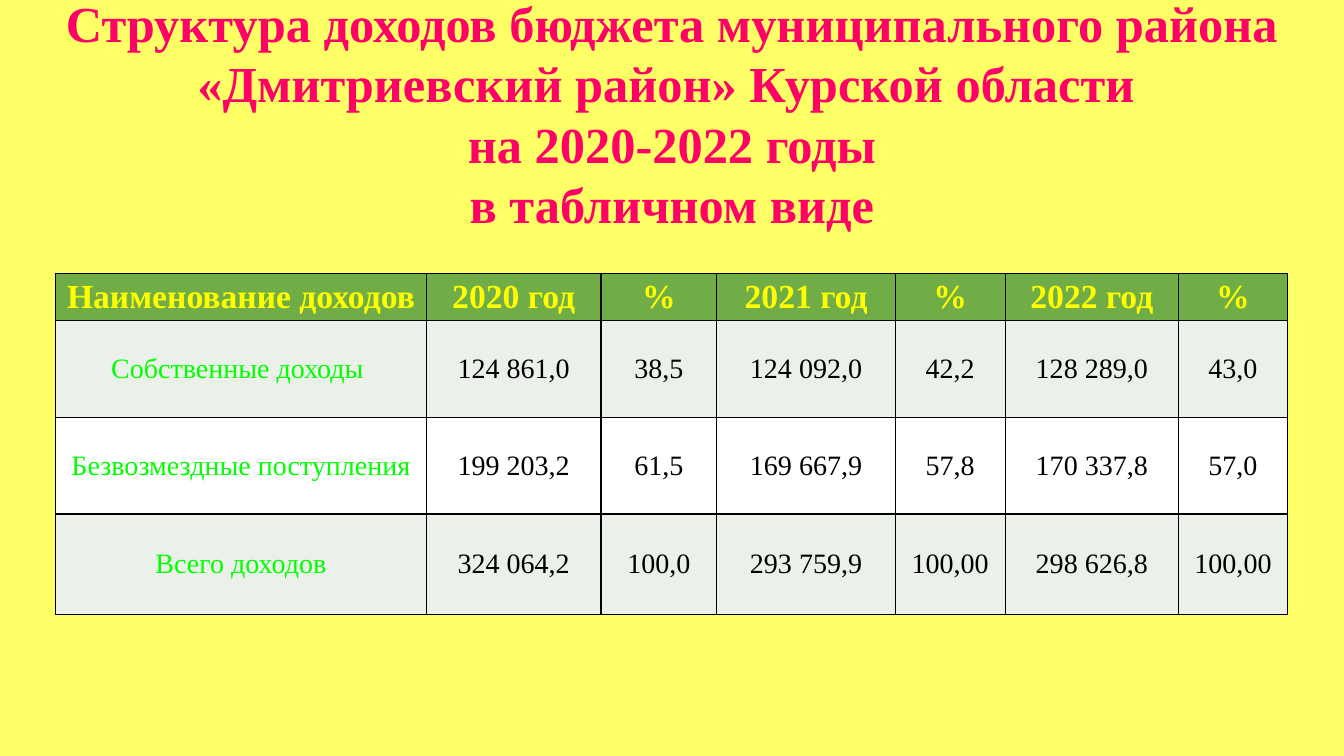
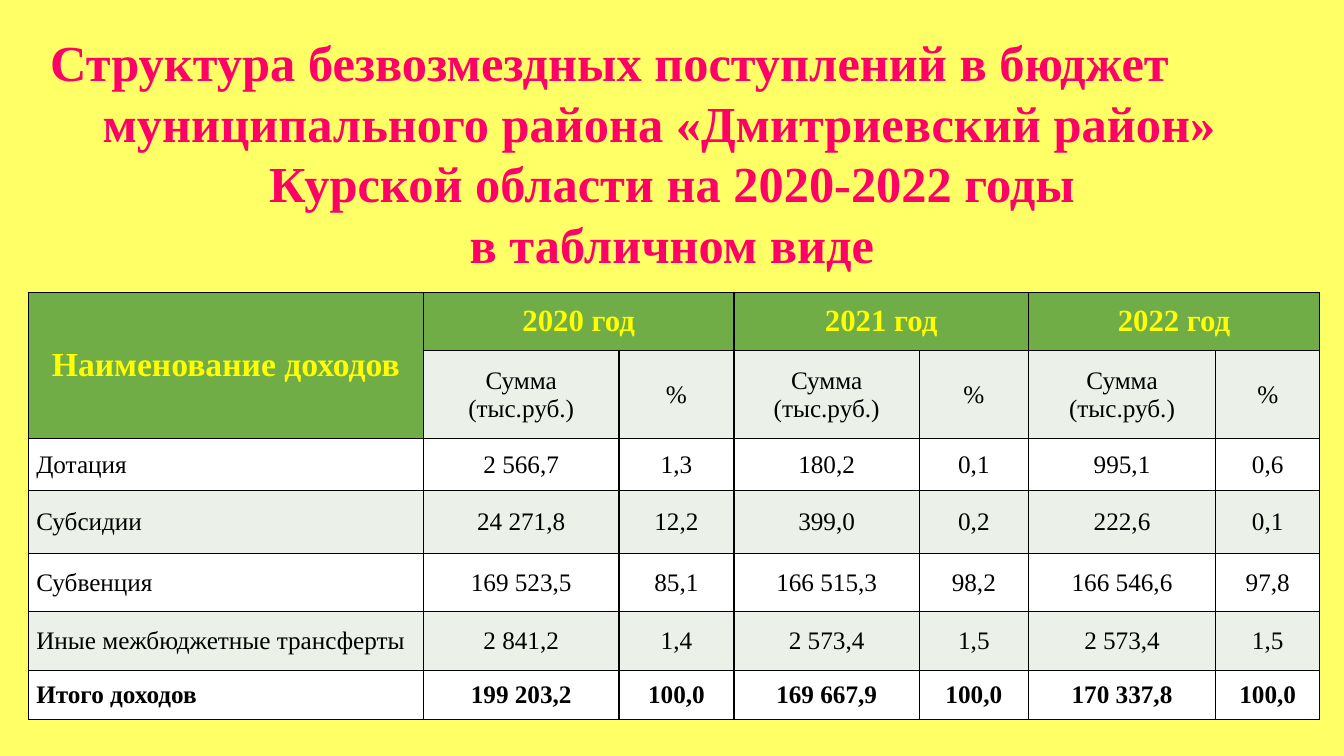
from lxml import etree
from pptx import Presentation
from pptx import util as u
from pptx.dml.color import RGBColor
from pptx.enum import text as t
from pptx.oxml.ns import qn

FONT = "Times New Roman"
HEX = {"page": "FFFF66", "title": "FF0066", "head": "70AD47", "gold": "FFFF00",
       "band": "EBF1E9", "white": "FFFFFF", "label": "00FF00", "ink": "000000"}

# Content: title lines are (text, left indent or None for centred),
# rows are (height, fill, cells), spans are (row, column, last row, last column)
SLIDES = [
    {
        "title": [("Структура доходов бюджета муниципального района", None),
                  ("«Дмитриевский район» Курской области", 1.86),
                  ("на 2020-2022 годы", None),
                  ("в табличном виде", None)],
        "box": (0, 2.24),
        "at": (0.55, 2.71),
        "cols": [3.68, 1.73, 1.15, 1.77, 1.09, 1.72, 1.08],
        "rows": [
            (0.47, "head", ["Наименование доходов", "2020 год", "%", "2021 год", "%",
                            "2022 год", "%"]),
            (0.96, "band", ["Собственные доходы ", "124 861,0", "38,5", "124 092,0", "42,2",
                            "128 289,0", "43,0"]),
            (0.96, "white", ["Безвозмездные поступления", "199 203,2", "61,5", "169 667,9",
                             "57,8", "170 337,8", "57,0"]),
            (1, "band", ["Всего доходов", "324 064,2", "100,0", "293 759,9", "100,00",
                         "298 626,8", "100,00"]),
        ],
        "spans": [],
        "year": 24, "size": 20, "label": "label", "align": t.PP_ALIGN.CENTER, "total": False,
    },
    {
        "title": [("Структура безвозмездных поступлений в бюджет", 0.4),
                  ("муниципального района «Дмитриевский район»", 0.92),
                  ("Курской области на 2020-2022 годы", None),
                  ("в табличном виде", None)],
        "box": (0.24, 2.54),
        "at": (0.28, 2.9),
        "cols": [3.92, 1.94, 1.14, 1.84, 1.08, 1.86, 1.03],
        "rows": [
            (0.58, "head", ["Наименование доходов", "2020 год", "", "2021 год", "",
                            "2022 год", ""]),
            (0.87, "band", [""] + ["Сумма (тыс.руб.)", "%"] * 3),
            (0.52, "white", ["Дотация", "2 566,7", "1,3", "180,2", "0,1", "995,1", "0,6"]),
            (0.62, "band", ["Субсидии", "24 271,8", "12,2", "399,0", "0,2", "222,6", "0,1"]),
            (0.58, "white", ["Субвенция", "169 523,5", "85,1", "166 515,3", "98,2",
                             "166 546,6", "97,8"]),
            (0.58, "band", ["Иные межбюджетные трансферты", "2 841,2", "1,4", "2 573,4", "1,5",
                            "2 573,4", "1,5"]),
            (0.49, "white", ["Итого доходов", "199 203,2", "100,0", "169 667,9", "100,0",
                             "170 337,8", "100,0"]),
        ],
        "spans": [(0, 0, 1, 0)] + [(0, c, 0, c + 1) for c in (1, 3, 5)],
        "year": 22, "size": 18, "label": "ink", "align": t.PP_ALIGN.LEFT, "total": True,
    },
]


def color(name):
    return RGBColor.from_string(HEX[name])


def write(par, words, size, ink, bold):
    run = par.add_run()
    run.text = words
    font = run.font
    font.name, font.size, font.bold = FONT, u.Pt(size), bold
    font.color.rgb = color(ink)


def border(cell):
    props = cell._tc.get_or_add_tcPr()
    for i, side in enumerate(("lnL", "lnR", "lnT", "lnB")):
        line = etree.Element(qn("a:" + side), w=str(u.Pt(1)))
        fill = etree.SubElement(line, qn("a:solidFill"))
        etree.SubElement(fill, qn("a:srgbClr"), val=HEX["ink"])
        props.insert(i, line)


def add_title(slide, data):
    top, high = data["box"]
    box = slide.shapes.add_textbox(0, u.Inches(top), u.Inches(13.33), u.Inches(high))
    frame = box.text_frame
    frame.word_wrap = True
    frame.vertical_anchor = t.MSO_ANCHOR.MIDDLE
    for i, (words, indent) in enumerate(data["title"]):
        par = frame.add_paragraph() if i else frame.paragraphs[0]
        par.alignment = t.PP_ALIGN.CENTER
        if indent is not None:
            par.alignment = t.PP_ALIGN.LEFT
            par._p.get_or_add_pPr().set("marL", str(u.Inches(indent)))
        write(par, words, 36, "title", True)


def add_grid(slide, data):
    rows, cols = data["rows"], data["cols"]
    left, top = data["at"]
    high = sum(row[0] for row in rows)
    grid = slide.shapes.add_table(len(rows), len(cols), u.Inches(left), u.Inches(top),
                                  u.Inches(sum(cols)), u.Inches(high)).table
    grid.first_row = grid.horz_banding = False
    for col, wide in zip(grid.columns, cols):
        col.width = u.Inches(wide)
    for r, (tall, fill, texts) in enumerate(rows):
        grid.rows[r].height = u.Inches(tall)
        head = fill == "head"
        bold = head or (data["total"] and r == len(rows) - 1)
        for c, words in enumerate(texts):
            cell = grid.cell(r, c)
            cell.fill.solid()
            cell.fill.fore_color.rgb = color(fill)
            border(cell)
            cell.vertical_anchor = t.MSO_ANCHOR.MIDDLE
            cell.margin_top = cell.margin_bottom = 0
            cell.margin_left = cell.margin_right = u.Inches(0.1 if c else 0.08)
            par = cell.text_frame.paragraphs[0]
            par.alignment = t.PP_ALIGN.CENTER if c or head else data["align"]
            if not words:
                continue
            if head:
                size, ink = (data["year"] if c else 24), "gold"
            else:
                size, ink = data["size"], ("ink" if c else data["label"])
            write(par, words, size, ink, bold)
    for r, c, low, last in data["spans"]:
        grid.cell(r, c).merge(grid.cell(low, last))


def main():
    deck = Presentation()
    deck.slide_width, deck.slide_height = u.Inches(13.33), u.Inches(7.5)
    # Shared page colour
    page = deck.slide_master.background.fill
    page.solid()
    page.fore_color.rgb = color("page")
    for data in SLIDES:
        slide = deck.slides.add_slide(deck.slide_layouts[6])
        add_title(slide, data)
        add_grid(slide, data)
    deck.save("out.pptx")


if __name__ == "__main__":
    main()
